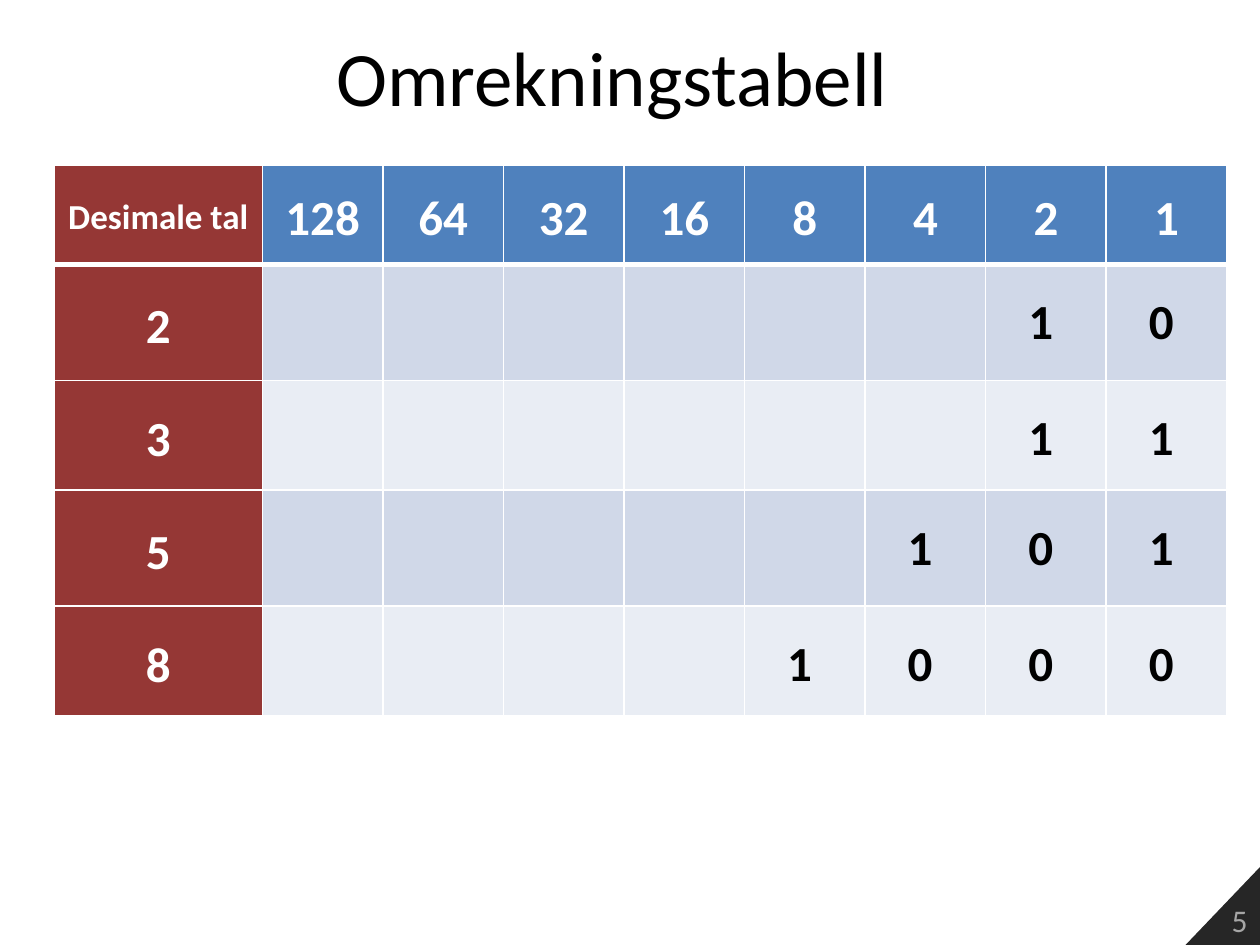
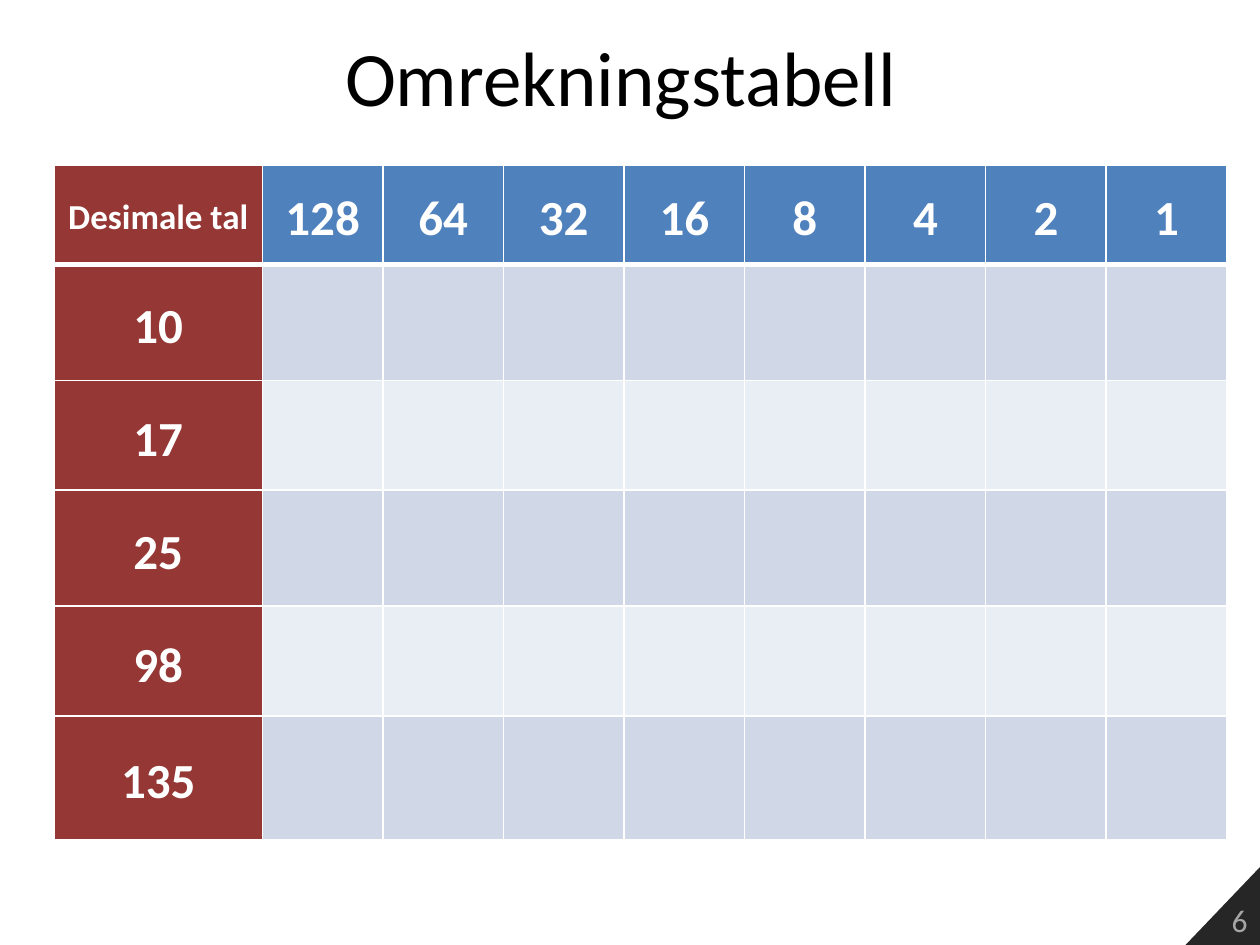
import pptx
import pptx.dml.color
import pptx.enum.text
import pptx.oxml
import pptx.oxml.ns
import pptx.util
from pptx.util import Cm

# Content: decimal numbers per slide, and whether their bits are filled in
SLIDES = [
    {"number": "5", "title": "Omrekningstabell ", "decimals": [2, 3, 5, 8], "solved": True},
    {"number": "6", "title": "Omrekningstabell", "decimals": [10, 17, 25, 98, 135], "solved": False},
]
CORNER_LABEL = "Desimale tal"
PLACES = [2 ** n for n in range(7, -1, -1)]

# Shared style
FONT = "Calibri"
BLACK, WHITE = "000000", "FFFFFF"
RED, BLUE = "953735", "4F81BD"
BANDS = ["D0D8E8", "E9EDF4"]
DARK, GREY = "262626", "A6A6A6"

# Shared grid, in centimetres
LEFT, TOP = 1.09, 3.33
LABEL_WIDTH, PLACE_WIDTH = 4.2, 2.43
ROW_HEIGHTS = [2, 2.34, 2.21, 2.34, 2.21, 2.49]
BIT_DX, BIT_DY, BIT_WIDTH, BIT_HEIGHT = 0.61, 0.41, 1.02, 1.45
SLIDE_WIDTH, SLIDE_HEIGHT = 25.4, 19.05
CORNER_LEFT, CORNER_TOP = 23.9, 17.48

ALIGN = pptx.enum.text.PP_ALIGN
ANCHOR = pptx.enum.text.MSO_ANCHOR


def rgb(color):
    return pptx.dml.color.RGBColor.from_string(color)


def write(tf, text, size=28, color=BLACK, bold=False, align=None, spacing=None):
    p = tf.paragraphs[0]
    p.alignment = align
    p.line_spacing = spacing
    r = p.add_run()
    r.text = text
    r.font.name = FONT
    r.font.size = pptx.util.Pt(size)
    r.font.bold = bold
    r.font.color.rgb = rgb(color)


def set_borders(cell, **widths):
    """Draw white cell borders; widths in points by side (L, R, T, B)."""
    tc_pr = cell._tc.get_or_add_tcPr()
    for side in "LRTB":
        width = pptx.util.Pt(widths.get(side, 1))
        tc_pr.append(pptx.oxml.parse_xml(
            f'<a:ln{side} {pptx.oxml.ns.nsdecls("a")} w="{width}"><a:solidFill>'
            f'<a:srgbClr val="{WHITE}"/></a:solidFill></a:ln{side}>'))


def add_title(slide, text):
    sp = slide.shapes.title
    sp.left, sp.top, sp.width, sp.height = Cm(LEFT), Cm(0.33), Cm(22.86), Cm(2.39)
    sp.text_frame.vertical_anchor = ANCHOR.MIDDLE
    write(sp.text_frame, text, size=44, align=ALIGN.CENTER)


def add_page_corner(slide, number):
    fb = slide.shapes.build_freeform(Cm(CORNER_LEFT), Cm(SLIDE_HEIGHT))
    fb.add_line_segments([(Cm(SLIDE_WIDTH), Cm(CORNER_TOP)),
                          (Cm(SLIDE_WIDTH), Cm(SLIDE_HEIGHT))], close=True)
    sp = fb.convert_to_shape()
    sp.shadow.inherit = False
    sp.fill.solid()
    sp.fill.fore_color.rgb = rgb(DARK)
    sp.line.fill.background()
    sp.text_frame.vertical_anchor = ANCHOR.BOTTOM
    write(sp.text_frame, number, size=18, color=GREY, align=ALIGN.RIGHT)


def add_conversion_table(slide, decimals):
    heights = ROW_HEIGHTS[:len(decimals) + 1]
    widths = [LABEL_WIDTH] + [PLACE_WIDTH] * len(PLACES)
    table = slide.shapes.add_table(
        len(heights), len(widths), Cm(LEFT), Cm(TOP),
        Cm(sum(widths)), Cm(sum(heights))).table
    for column, width in zip(table.columns, widths):
        column.width = Cm(width)
    for row, height in zip(table.rows, heights):
        row.height = Cm(height)

    rows = [[CORNER_LABEL] + PLACES] + [[d] + [""] * len(PLACES) for d in decimals]
    for i, row in enumerate(rows):
        for j, value in enumerate(row):
            cell = table.cell(i, j)
            set_borders(cell, T=3 if i == 1 else 1, B=3 if i == 0 else 1)
            cell.fill.solid()
            cell.fill.fore_color.rgb = rgb(
                RED if j == 0 else BLUE if i == 0 else BANDS[(i - 1) % 2])
            if value == "":
                continue
            cell.vertical_anchor = ANCHOR.MIDDLE
            cell.margin_left = cell.margin_right = Cm(0.18)
            cell.margin_top = cell.margin_bottom = 0
            write(cell.text_frame, str(value), size=20 if value == CORNER_LABEL else 28,
                  color=WHITE, bold=True, align=ALIGN.CENTER, spacing=1.15)


def add_bits(slide, decimals):
    for i, decimal in enumerate(decimals, start=1):
        bits = f"{decimal:b}"
        y = TOP + sum(ROW_HEIGHTS[:i]) + BIT_DY
        for j, bit in enumerate(bits, start=len(PLACES) - len(bits)):
            x = LEFT + LABEL_WIDTH + j * PLACE_WIDTH + BIT_DX
            tf = slide.shapes.add_textbox(
                Cm(x), Cm(y), Cm(BIT_WIDTH), Cm(BIT_HEIGHT)).text_frame
            tf.word_wrap = False
            tf.auto_size = pptx.enum.text.MSO_AUTO_SIZE.SHAPE_TO_FIT_TEXT
            write(tf, bit, bold=True)


def main():
    prs = pptx.Presentation()
    prs.slide_width, prs.slide_height = Cm(SLIDE_WIDTH), Cm(SLIDE_HEIGHT)
    for content in SLIDES:
        slide = prs.slides.add_slide(prs.slide_layouts[5])
        add_page_corner(slide, content["number"])
        add_title(slide, content["title"])
        add_conversion_table(slide, content["decimals"])
        if content["solved"]:
            add_bits(slide, content["decimals"])
    prs.save("out.pptx")


if __name__ == "__main__":
    main()
